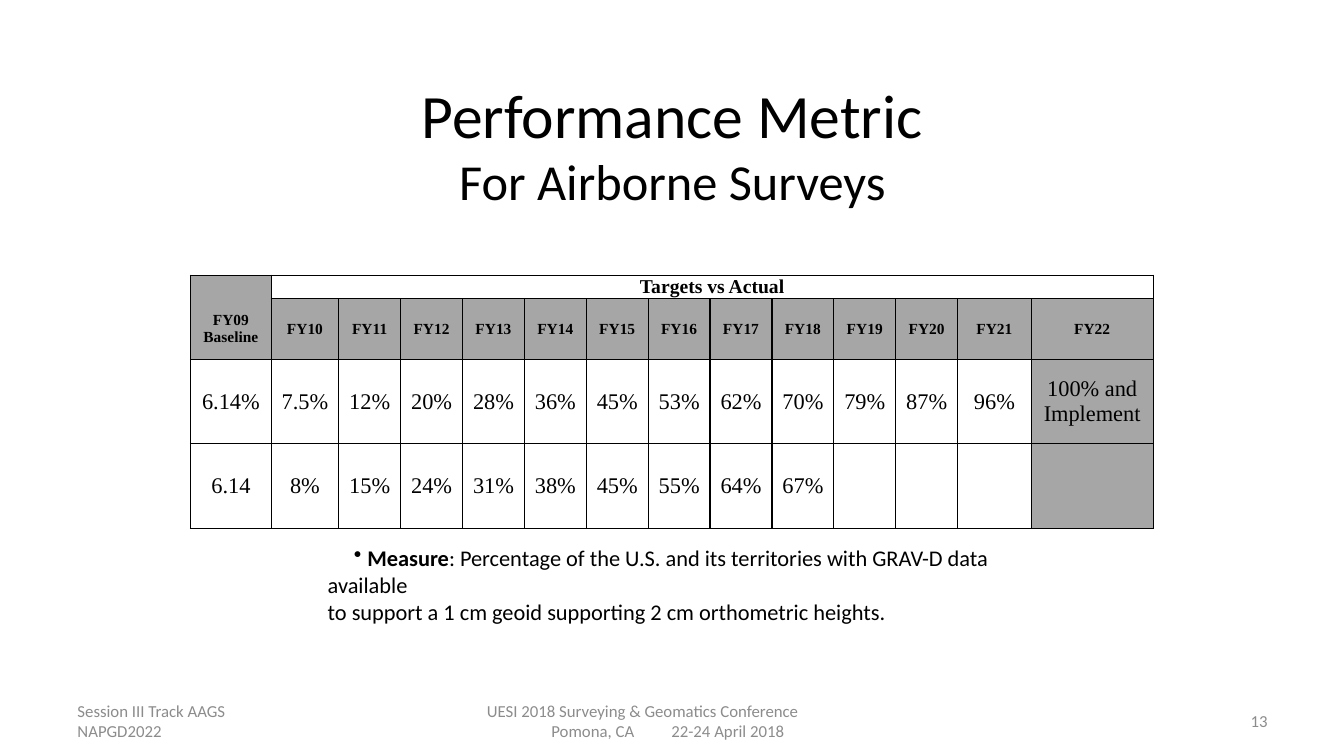
from lxml import etree
from pptx import Presentation
from pptx.dml.color import RGBColor
from pptx.enum.text import MSO_ANCHOR, PP_ALIGN
from pptx.oxml.ns import qn
from pptx.util import Inches, Pt

BLACK = RGBColor(0x00, 0x00, 0x00)
WHITE = RGBColor(0xFF, 0xFF, 0xFF)
GRAY = RGBColor(0xA6, 0xA6, 0xA6)
FAINT = RGBColor(0x8C, 0x8C, 0x8C)
LEFT, MID, RIGHT = PP_ALIGN.LEFT, PP_ALIGN.CENTER, PP_ALIGN.RIGHT
TOP, CENTER = MSO_ANCHOR.TOP, MSO_ANCHOR.MIDDLE
SANS, SERIF = "Calibri", "Times New Roman"

YEARS = [f"FY{year}" for year in range(10, 23)]
TARGET = ["6.14%", "7.5%", "12%", "20%", "28%", "36%", "45%", "53%",
          "62%", "70%", "79%", "87%", "96%", "100% and Implement"]
ACTUAL = ["6.14", "8%", "15%", "24%", "31%", "38%", "45%", "55%",
          "64%", "67%", "", "", "", ""]
WIDTHS = [0.8, 0.67] + [6.14 / 10] * 10 + [0.73, 1.21]
HEIGHTS = [0.23, 0.6, 0.84, 0.84]


def write(para, text, size=16, font=SANS, color=BLACK, bold=False, align=None):
    """Add one run to a paragraph; a vertical tab in it breaks the line."""
    if align is not None:
        para.alignment = align
    for i, line in enumerate(text.split("\v")):
        if i:
            para.add_line_break()
        run = para.add_run()
        run.text = line
        run.font.size, run.font.name, run.font.bold = Pt(size), font, bold
        run.font.color.rgb = color


def indent(para, first, bullet=None, tab=None):
    """Set the first-line indent, with an optional bullet or tab stop."""
    props = para._p.get_or_add_pPr()
    props.set("marL", "0")
    props.set("indent", str(Inches(first)))
    if bullet:
        etree.SubElement(props, qn("a:buChar"), char=bullet)
    if tab:
        stops = etree.SubElement(props, qn("a:tabLst"))
        etree.SubElement(stops, qn("a:tab"), pos=str(Inches(tab)), algn="l")


def outline(cell):
    props = cell._tc.get_or_add_tcPr()
    for side in ("lnL", "lnR", "lnT", "lnB"):
        line = etree.SubElement(props, qn("a:" + side), w=str(Pt(1)))
        fill = etree.SubElement(line, qn("a:solidFill"))
        etree.SubElement(fill, qn("a:srgbClr"), val=str(BLACK))


class Page:
    def __init__(self):
        self.deck = Presentation()
        self.deck.slide_width = Inches(13.33)
        self.deck.slide_height = Inches(7.5)
        self.slide = self.deck.slides.add_slide(self.deck.slide_layouts[6])

    def box(self, x, y, w, h, anchor=CENTER, inset=0.1):
        shape = self.slide.shapes.add_textbox(
            Inches(x), Inches(y), Inches(w), Inches(h))
        frame = shape.text_frame
        frame.word_wrap = True
        frame.vertical_anchor = anchor
        frame.margin_left = frame.margin_right = Inches(inset)
        return frame

    def label(self, x, w, text, align):
        write(self.box(x, 6.95, w, 0.4).paragraphs[0], text,
              size=12, color=FAINT, align=align)

    def grid(self, x, y, widths, heights):
        table = self.slide.shapes.add_table(
            len(heights), len(widths), Inches(x), Inches(y),
            Inches(sum(widths)), Inches(sum(heights))).table
        table.first_row = table.horz_banding = False
        for col, width in zip(table.columns, widths):
            col.width = Inches(width)
        for row, height in zip(table.rows, heights):
            row.height = Inches(height)
        return table

    def cell(self, cell, text, fill, **style):
        outline(cell)
        cell.fill.solid()
        cell.fill.fore_color.rgb = fill
        cell.vertical_anchor = CENTER
        cell.margin_left = cell.margin_right = Inches(0.05)
        cell.margin_top = cell.margin_bottom = 0
        if text:
            write(cell.text_frame.paragraphs[0], text,
                  font=SERIF, align=MID, **style)


def main():
    page = Page()

    title = page.box(2.17, 0.8, 9, 1.25).paragraphs[0]
    write(title, "Performance Metric\v", size=44, align=MID)
    write(title, "For Airborne Surveys", size=36)

    notes = page.box(2.92, 5.35, 7.68, 0.92, anchor=TOP, inset=0.33)
    para = notes.paragraphs[0]
    indent(para, 0.26, bullet="•")
    write(para, " ", font=SERIF, bold=True)
    write(para, "Measure", bold=True)
    write(para, ": Percentage of the U.S. and its territories"
                " with GRAV-D data available")
    write(notes.add_paragraph(), "to support a 1 cm geoid supporting"
                                 " 2 cm orthometric heights.")

    table = page.grid(1.89, 2.73, WIDTHS, HEIGHTS)
    last = len(WIDTHS) - 1
    table.cell(0, 0).merge(table.cell(1, 0))
    table.cell(0, 1).merge(table.cell(0, last))
    heads = ["FY09 Baseline", "Targets vs Actual"] + [""] * (last - 1)
    rows = [heads, [""] + YEARS, TARGET, ACTUAL]
    sizes = [14, 11, 16, 16]
    for r, (row, size) in enumerate(zip(rows, sizes)):
        for c, text in enumerate(row):
            base = r == 0 and c == 0
            shaded = base or r == 1 or (r > 1 and c == last)
            page.cell(table.cell(r, c), text, GRAY if shaded else WHITE,
                      size=11 if base else size, bold=r < 2)
    table.cell(0, 0).margin_top = Inches(0.23)

    page.label(0.67, 3.11, "Session III Track AAGS\vNAPGD2022", LEFT)
    event = page.box(4.56, 6.95, 4.22, 0.4)
    para = event.paragraphs[0]
    indent(para, 0.17)
    write(para, "UESI 2018 Surveying & Geomatics Conference",
          size=12, color=FAINT)
    para = event.add_paragraph()
    indent(para, 0.81, tab=2.09)
    write(para, "Pomona, CA\t22-24 April 2018", size=12, color=FAINT)
    page.label(9.56, 3.11, "13", RIGHT)

    page.deck.save("out.pptx")


if __name__ == "__main__":
    main()
